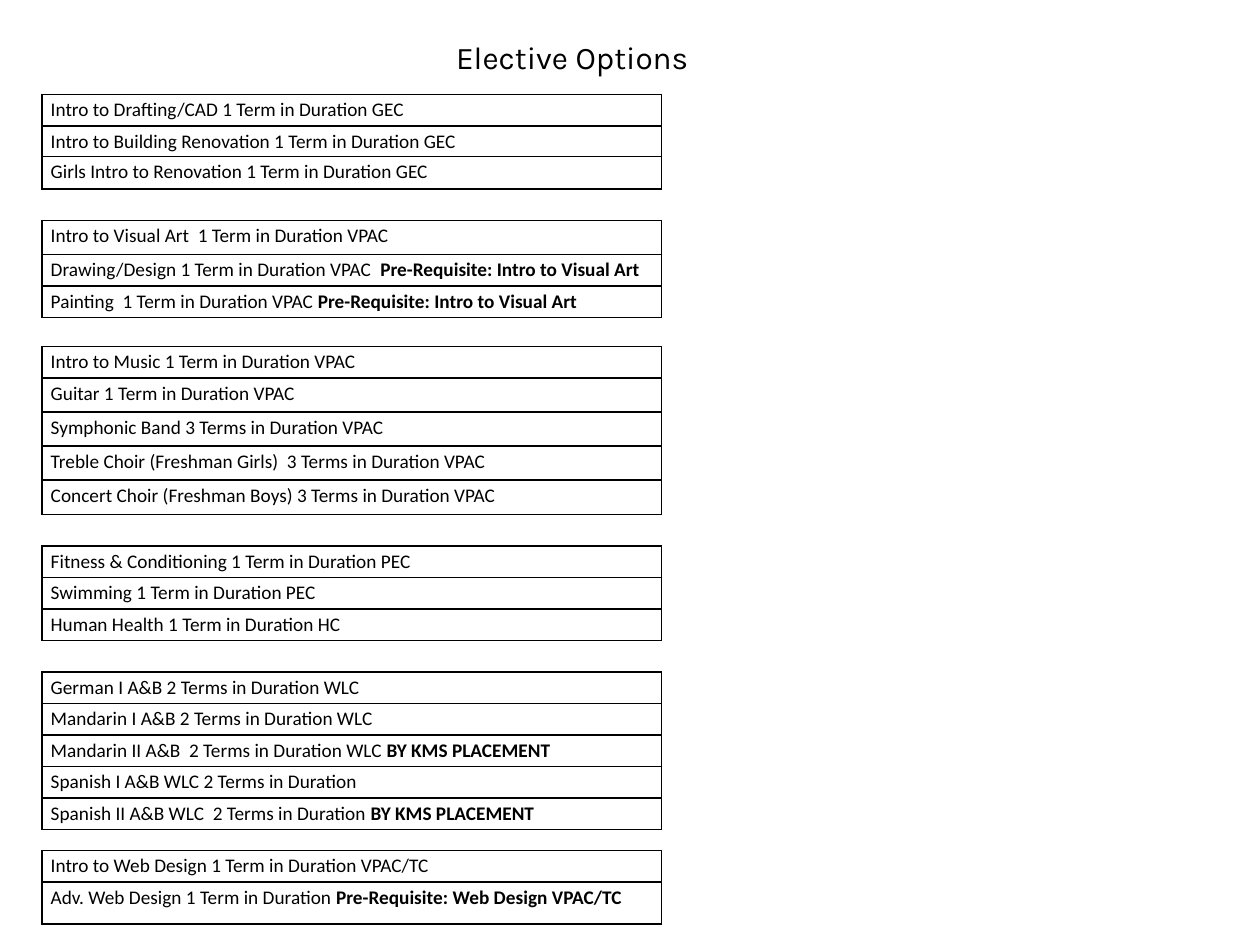
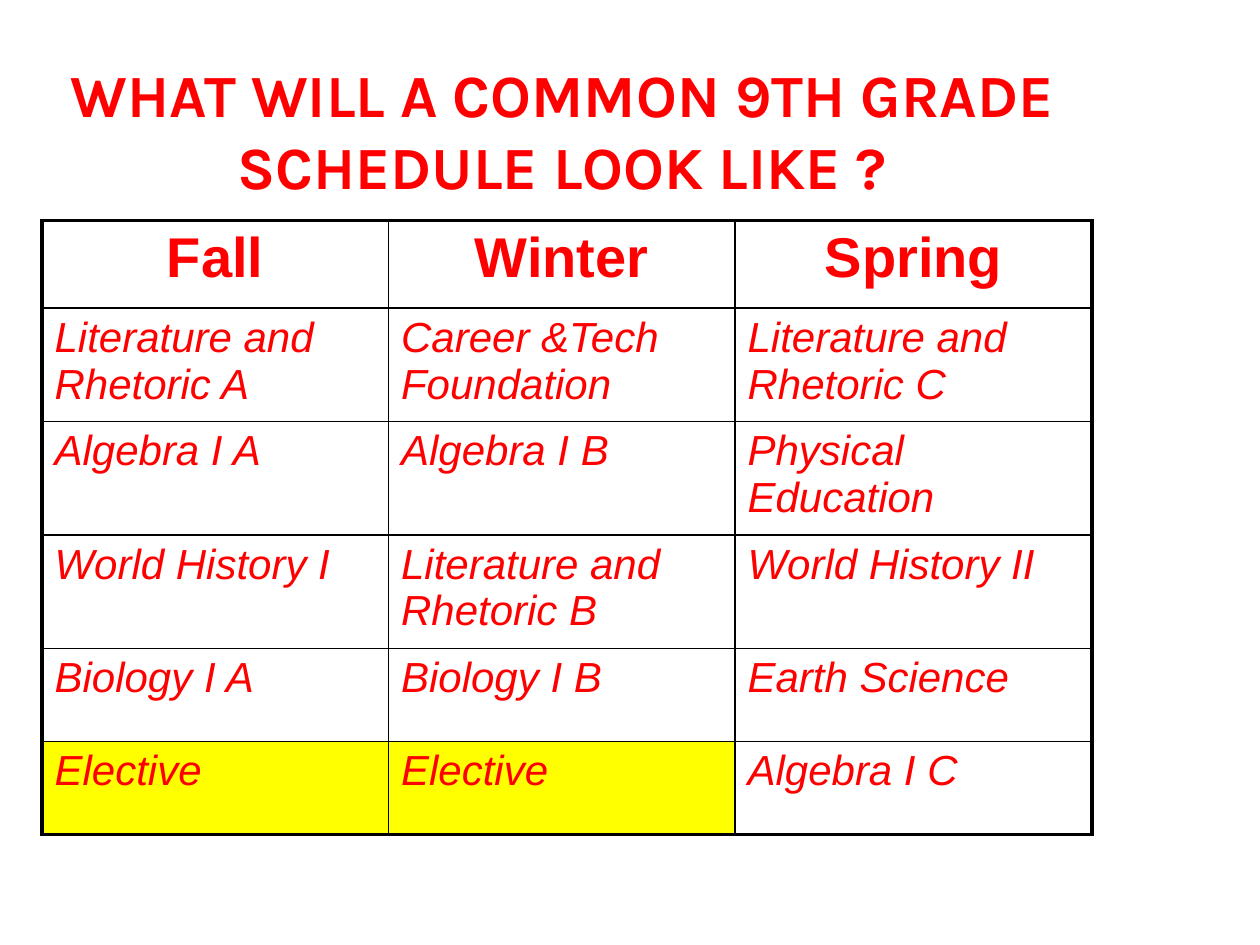
from lxml import etree
from pptx import Presentation
from pptx.dml.color import RGBColor
from pptx.enum import text
from pptx.oxml import ns
from pptx.util import Pt

BLACK, RED, YELLOW = "000000", "FF0000", "FFFF00"
TITLE_FONT = "Karla"
TABLE_LEFT = 24
THIN, THICK = 1, 2.25

ELECTIVE_WIDTH = 354
ELECTIVES = [
    (54, [
        (18, "Intro to Drafting/CAD 1 Term in Duration GEC"),
        (17.5, "Intro to Building Renovation 1 Term in Duration GEC"),
        (18.5, "Girls Intro to Renovation 1 Term in Duration GEC"),
    ]),
    (126, [
        (19.5, "Intro to Visual Art  1 Term in Duration VPAC"),
        (18, "Drawing/Design 1 Term in Duration VPAC  |Pre-Requisite: Intro to Visual Art"),
        (18, "Painting  1 Term in Duration VPAC |Pre-Requisite: Intro to Visual Art"),
    ]),
    (198, [
        (18, "Intro to Music 1 Term in Duration VPAC"),
        (19.5, "Guitar 1 Term in Duration VPAC"),
        (19.5, "Symphonic Band 3 Terms in Duration VPAC"),
        (19.5, "Treble Choir (Freshman Girls)  3 Terms in Duration VPAC"),
        (19.5, "Concert Choir (Freshman Boys) 3 Terms in Duration VPAC"),
    ]),
    (312, [
        (18, "Fitness & Conditioning 1 Term in Duration PEC"),
        (18, "Swimming 1 Term in Duration PEC"),
        (18, "Human Health 1 Term in Duration HC"),
    ]),
    (384, [
        (18, "German I A&B 2 Terms in Duration WLC"),
        (18, "Mandarin I A&B 2 Terms in Duration WLC"),
        (18, "Mandarin II A&B  2 Terms in Duration WLC |BY KMS PLACEMENT"),
        (18, "Spanish I A&B WLC 2 Terms in Duration"),
        (18, "Spanish II A&B WLC  2 Terms in Duration |BY KMS PLACEMENT"),
    ]),
    (486, [
        (18, "Intro to Web Design 1 Term in Duration VPAC/TC"),
        (24, "Adv. Web Design 1 Term in Duration |Pre-Requisite: Web Design VPAC/TC"),
    ]),
]

TERM_WIDTHS = [198, 198, 204]
SCHEDULE = [
    ["Fall", "Winter", "Spring"],
    ["Literature and Rhetoric A", "Career &Tech Foundation", "Literature and Rhetoric C"],
    ["Algebra I A", "Algebra I B", "Physical Education"],
    ["World History I", "Literature and Rhetoric B", "World History II"],
    ["Biology I A", "Biology I B", "Earth Science"],
    ["Elective", "Elective", "Algebra I C"],
]
SCHEDULE_HEIGHTS = [50] + [60.8] * 3 + [53.2] * 2


def rgb(value):
    return RGBColor.from_string(value)


def style(paragraph, font_name, size, color, bold=False, italic=False):
    font = paragraph.font
    font.name, font.size = font_name, Pt(size)
    font.bold, font.italic = bold, italic
    font.color.rgb = rgb(color)


def add_title(slide, box, wording, size, color, bold=False, side=7.2, edge=3.6,
              anchor=text.MSO_ANCHOR.TOP):
    frame = slide.shapes.add_textbox(*map(Pt, box)).text_frame
    frame.word_wrap = True
    frame.vertical_anchor = anchor
    frame.margin_left = frame.margin_right = Pt(side)
    frame.margin_top = frame.margin_bottom = Pt(edge)
    title = frame.paragraphs[0]
    title.text = wording
    title.alignment = text.PP_ALIGN.CENTER
    style(title, TITLE_FONT, size, color, bold)


def set_borders(cell, left=THIN, right=THIN, top=THIN, bottom=THIN):
    properties = cell._tc.get_or_add_tcPr()
    for side, width in zip("LRTB", (left, right, top, bottom)):
        line = etree.SubElement(properties, ns.qn(f"a:ln{side}"), w=str(int(Pt(width))))
        fill = etree.SubElement(line, ns.qn("a:solidFill"))
        etree.SubElement(fill, ns.qn("a:srgbClr"), val=BLACK)


def add_grid(slide, left, top, widths, heights):
    grid = slide.shapes.add_table(len(heights), len(widths), Pt(left), Pt(top),
                                  Pt(sum(widths)), Pt(sum(heights))).table
    grid.first_row = grid.horz_banding = False
    for column, width in zip(grid.columns, widths):
        column.width = Pt(width)
    for row, height in zip(grid.rows, heights):
        row.height = Pt(height)
    return grid


def add_elective_group(slide, left, top, width, courses):
    grid = add_grid(slide, left, top, [width], [height for height, _ in courses])
    for row, (_, course) in enumerate(courses):
        cell = grid.cell(row, 0)
        cell.margin_left = cell.margin_right = Pt(5)
        cell.margin_top = cell.margin_bottom = 0
        set_borders(cell)
        cell.fill.background()
        entry = cell.text_frame.paragraphs[0]
        entry.line_spacing = 1.15
        name, _, condition = course.partition("|")
        entry.add_run().text = name
        if condition:
            requirement = entry.add_run()
            requirement.text = condition
            requirement.font.bold = True
        style(entry, "Calibri", 11, BLACK)


def add_schedule(slide, left, top, widths, heights):
    grid = add_grid(slide, left, top, widths, heights)
    last_row, last_column = len(heights) - 1, len(widths) - 1
    for row, classes in enumerate(SCHEDULE):
        for column, name in enumerate(classes):
            cell = grid.cell(row, column)
            set_borders(cell,
                        left=THIN if column else THICK,
                        right=THICK if column == last_column else THIN,
                        top=THIN if row else THICK,
                        bottom=THICK if row == last_row else THIN)
            if name == "Elective":
                cell.fill.solid()
                cell.fill.fore_color.rgb = rgb(YELLOW)
            else:
                cell.fill.background()
            entry = cell.text_frame.paragraphs[0]
            entry.text = name
            if row == 0:
                entry.alignment = text.PP_ALIGN.CENTER
                style(entry, "Arial", 32, RED, bold=True)
            else:
                style(entry, "Arial", 24, RED, italic=True)


def build_electives(slide):
    for top, courses in ELECTIVES:
        add_elective_group(slide, TABLE_LEFT, top, ELECTIVE_WIDTH, courses)
    add_title(slide, (192, 18, 270, 30), "Elective Options", 18, BLACK)


def build_schedule(slide):
    add_title(slide, (36, 25, 570.5, 90), "WHAT WILL A COMMON 9TH GRADE SCHEDULE LOOK LIKE ?",
              34.2, RED, bold=True, side=3.6, edge=0, anchor=text.MSO_ANCHOR.BOTTOM)
    add_schedule(slide, TABLE_LEFT, 126, TERM_WIDTHS, SCHEDULE_HEIGHTS)


def main():
    deck = Presentation()
    deck.slide_width, deck.slide_height = Pt(720), Pt(540)
    for build in (build_electives, build_schedule):
        build(deck.slides.add_slide(deck.slide_layouts[6]))
    deck.save("out.pptx")


if __name__ == "__main__":
    main()
